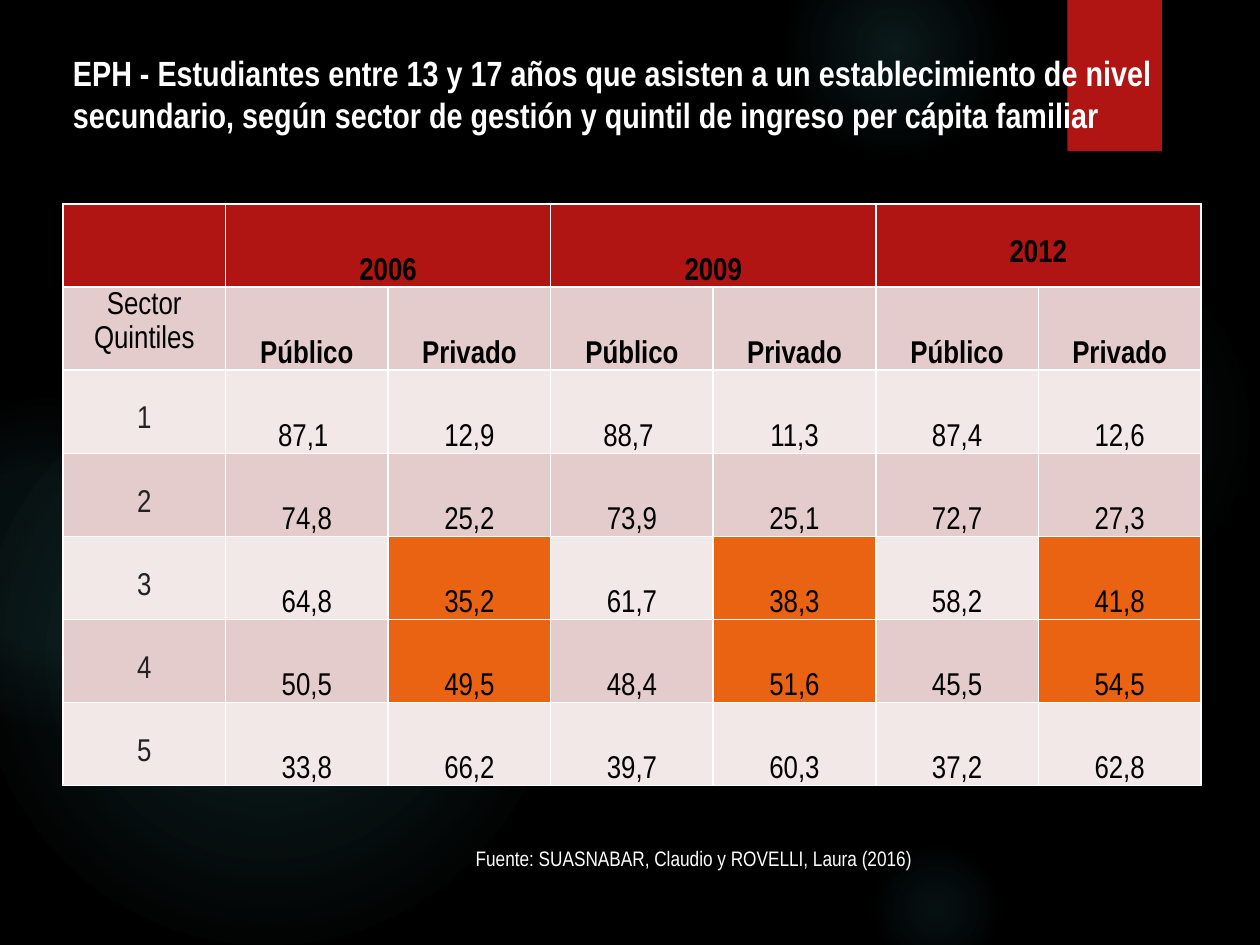
from dataclasses import dataclass

import pptx
import pptx.dml.color
import pptx.enum.shapes
import pptx.enum.text
import pptx.oxml
import pptx.oxml.ns
import pptx.util

Pt = pptx.util.Pt
Align = pptx.enum.text.PP_ALIGN
Anchor = pptx.enum.text.MSO_ANCHOR
Shape = pptx.enum.shapes.MSO_SHAPE


@dataclass(frozen=True)
class Theme:
    font: str = "Arial Narrow"
    background: str = "000000"
    glow: str = "50B9C1"
    red: str = "B01513"
    bands: tuple = ("E4CCCC", "F2E8E7")
    highlight: str = "EA6312"
    light: str = "FFFFFF"
    dark: str = "000000"
    label: str = "222222"
    title_size: int = 20
    table_size: int = 18
    source_size: int = 12


THEME = Theme()

GLOWS = [
    ((496, 132, 222), ((0, 7), (36, 6), (69, 0))),
    ((448, -36, 126), ((0, 14), (36, 7), (73, 0))),
    ((496, 480, 78), ((0, 9), (36, 5), (66, 0))),
    ((-12, 210, 330), ((0, 11), (36, 10), (75, 0))),
    ((-66, 228, 186), ((0, 8), (36, 8), (72, 0))),
]

YEARS = ["2006", "2009", "2012"]
SECTORS = ["Público", "Privado"]
QUINTILES = [
    ["87,1 ", "12,9", "88,7 ", "11,3", "87,4", "12,6"],
    ["74,8", "25,2", "73,9", "25,1", "72,7", "27,3"],
    ["64,8", "35,2", "61,7", "38,3", "58,2", "41,8"],
    ["50,5", "49,5", "48,4", "51,6", "45,5", "54,5"],
    ["33,8", "66,2", "39,7", "60,3", "37,2", "62,8"],
]
HIGHLIGHTED_QUINTILES = (3, 4)


def rgb(color):
    return pptx.dml.color.RGBColor.from_string(color)


def points(box):
    return [Pt(length) for length in box]


def paint(fill, color):
    fill.solid()
    fill.fore_color.rgb = rgb(color)


def write(frame, text, size, color, bold=False, align=Align.LEFT):
    para = frame.paragraphs[0]
    para.text = text
    para.alignment = align
    para.font.name = THEME.font
    para.font.size = Pt(size)
    para.font.bold = bold
    para.font.color.rgb = rgb(color)
    return para


def add_plain_shape(page, kind, box):
    shape = page.shapes.add_shape(kind, *points(box))
    shape.shadow.inherit = False
    shape.line.fill.background()
    page.shapes.title.element.addprevious(shape.element)
    return shape


def add_glow(page, box, stops):
    left, top, size = box
    glow = add_plain_shape(page, Shape.OVAL, (left, top, size, size))
    glow.fill.background()
    stop_xml = "".join(
        f'<a:gs pos="{position * 1000}"><a:srgbClr val="{THEME.glow}">'
        f'<a:alpha val="{opacity * 1000}"/></a:srgbClr></a:gs>'
        for position, opacity in stops
    )
    gradient = pptx.oxml.parse_xml(
        f'<a:gradFill {pptx.oxml.ns.nsdecls("a")}><a:gsLst>{stop_xml}</a:gsLst>'
        '<a:path path="circle"><a:fillToRect l="50000" t="50000" r="50000" b="50000"/>'
        "</a:path></a:gradFill>"
    )
    properties = glow.element.spPr
    properties.replace(properties.find(pptx.oxml.ns.qn("a:noFill")), gradient)


def add_ribbon(page, box):
    ribbon = add_plain_shape(page, Shape.RECTANGLE, box)
    paint(ribbon.fill, THEME.red)
    effects = ribbon.element.spPr.find(pptx.oxml.ns.qn("a:effectLst"))
    effects.append(pptx.oxml.parse_xml(
        f'<a:outerShdw {pptx.oxml.ns.nsdecls("a")} blurRad="{Pt(3)}" dist="{Pt(2)}" '
        'dir="5400000" rotWithShape="0"><a:srgbClr val="000000">'
        '<a:alpha val="45000"/></a:srgbClr></a:outerShdw>'
    ))


def place_title(page, box, text):
    title = page.shapes.title
    title.left, title.top, title.width, title.height = points(box)
    title.text_frame.vertical_anchor = Anchor.TOP
    write(title.text_frame, text, THEME.title_size, THEME.light, bold=True)


def fill_cell(cell, text, fill, color=THEME.dark, bold=False, top=None):
    paint(cell.fill, fill)
    cell.margin_left = cell.margin_right = Pt(3.6)
    cell.margin_top, cell.margin_bottom = Pt(top or 0), Pt(0)
    cell.vertical_anchor = Anchor.BOTTOM if top is None else Anchor.TOP
    para = write(cell.text_frame, text, THEME.table_size, color, bold, Align.CENTER)
    para.line_spacing = 1.15


def add_quintile_table(page, box):
    left, top, width, height = box
    row_count, column_count = len(QUINTILES) + 2, len(YEARS) * len(SECTORS) + 1
    table = page.shapes.add_table(row_count, column_count, *points(box)).table
    for column in table.columns:
        column.width = Pt(width / column_count)
    for row in table.rows:
        row.height = Pt(height / row_count)

    label_drop = 18
    fill_cell(table.cell(0, 0), "", THEME.red)
    for index, year in enumerate(YEARS):
        first = 1 + index * len(SECTORS)
        table.cell(0, first).merge(table.cell(0, first + len(SECTORS) - 1))
        drop = label_drop if year == YEARS[-1] else None
        fill_cell(table.cell(0, first), year, THEME.red, bold=True, top=drop)

    fill_cell(table.cell(1, 0), "Sector Quintiles", THEME.bands[0], top=0)
    for column, sector in enumerate(SECTORS * len(YEARS), 1):
        fill_cell(table.cell(1, column), sector, THEME.bands[0], bold=True)

    for quintile, values in enumerate(QUINTILES, 1):
        row, band = quintile + 1, THEME.bands[quintile % 2]
        fill_cell(table.cell(row, 0), str(quintile), band, THEME.label, top=label_drop)
        for column, value in enumerate(values, 1):
            private = column % 2 == 0
            marked = private and quintile in HIGHLIGHTED_QUINTILES
            fill_cell(table.cell(row, column), value, THEME.highlight if marked else band)


def add_source(page, box, text):
    frame = page.shapes.add_textbox(*points(box)).text_frame
    frame.word_wrap = True
    write(frame, text, THEME.source_size, THEME.light, align=Align.CENTER)


def main():
    deck = pptx.Presentation()
    deck.slide_width, deck.slide_height = Pt(720), Pt(540)
    page = deck.slides.add_slide(deck.slide_layouts.get_by_name("Title Only"))
    paint(page.background.fill, THEME.background)
    for box, stops in GLOWS:
        add_glow(page, box, stops)
    add_ribbon(page, (610, 0, 54, 86.4))
    place_title(
        page,
        (34.5, 26, 648, 80),
        "EPH - Estudiantes entre 13 y 17 años que asisten a un establecimiento de nivel "
        "secundario, según sector de gestión y quintil de ingreso per cápita familiar",
    )
    add_quintile_table(page, (36, 116.6, 650.3, 332.5))
    add_source(page, (82, 479.5, 629, 21.6), "Fuente: SUASNABAR, Claudio y ROVELLI, Laura (2016)")
    deck.save("out.pptx")


if __name__ == "__main__":
    main()
